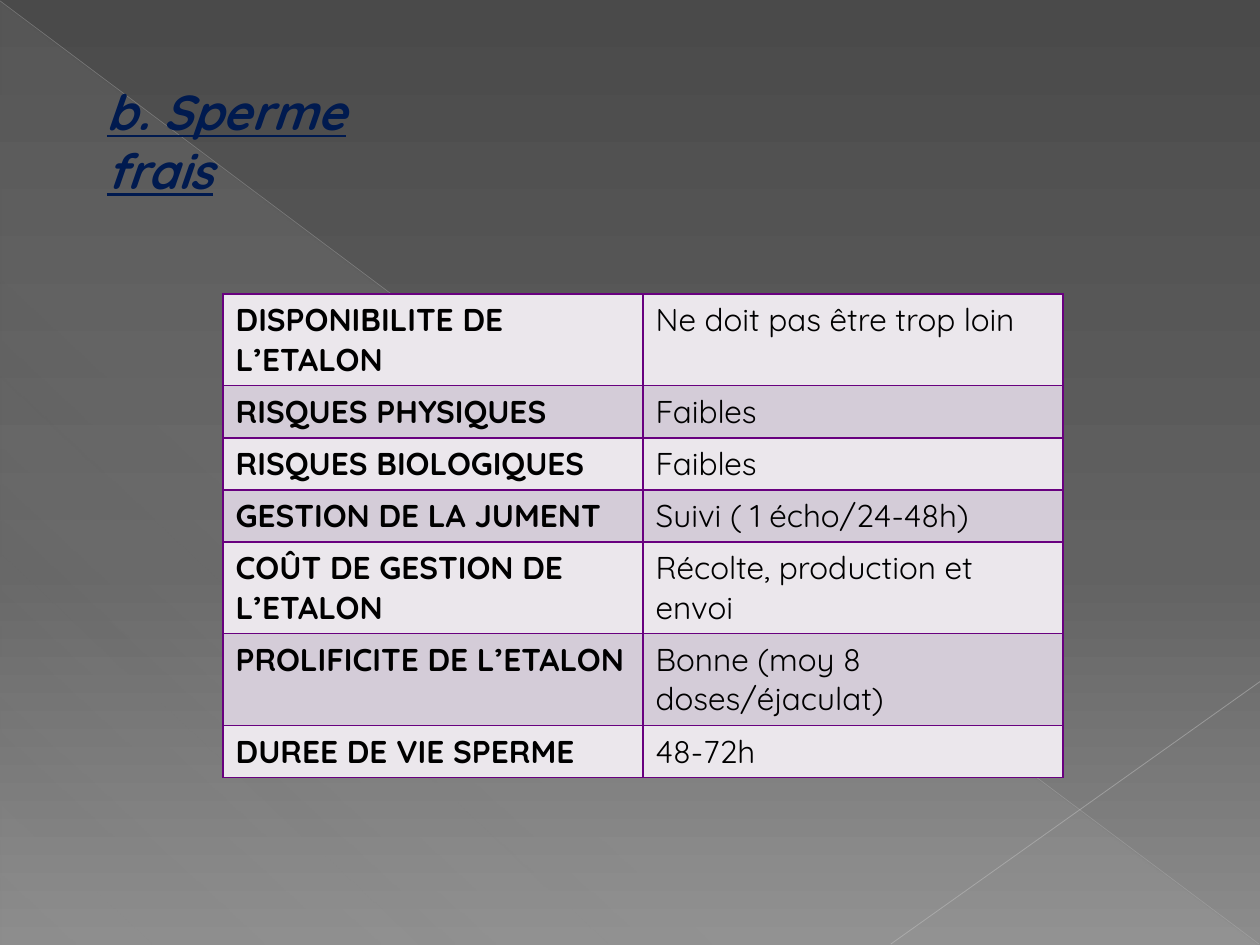
from lxml import etree
from pptx import Presentation
from pptx.dml.color import RGBColor
from pptx.enum.shapes import MSO_CONNECTOR, MSO_SHAPE
from pptx.oxml.ns import qn
from pptx.util import Pt

STRAIGHT = MSO_CONNECTOR.STRAIGHT
TRIANGLE = MSO_SHAPE.RIGHT_TRIANGLE
FONT = "Quicksand"
COLORS = {
    "bg_top": "4A4A4A", "bg_mid": "626262", "bg_low": "8C8C8C",
    "triangle": "D2D2D2", "long_line": "BFBFBF", "short_line": "C6C6C6",
    "title": "001A4F", "text": "000000", "border": "68007F",
    "light": "EBE7EC", "dark": "D4CCD8",
}
ROWS = [
    ("DISPONIBILITE DE L’ETALON", "Ne doit pas être trop loin"),
    ("RISQUES PHYSIQUES", "Faibles"),
    ("RISQUES BIOLOGIQUES", "Faibles"),
    ("GESTION DE LA JUMENT", "Suivi ( 1 écho/24-48h)"),
    ("COÛT DE GESTION DE L’ETALON", "Récolte, production et envoi"),
    ("PROLIFICITE DE L’ETALON", "Bonne (moy 8 doses/éjaculat)"),
    ("DUREE DE VIE SPERME", "48-72h"),
]


def rgb(name):
    """Return the named colour."""
    return RGBColor.from_string(COLORS[name])


def add_color(parent, name, alpha=100):
    """Append a colour with an opacity in percent."""
    clr = etree.SubElement(parent, qn("a:srgbClr"), val=COLORS[name])
    if alpha < 100:
        etree.SubElement(clr, qn("a:alpha"), val=str(alpha * 1000))


def set_gradient(fill, element, stops, angle):
    """Fill with (position, colour, opacity) stops at a clockwise angle."""
    fill.gradient()
    fill.gradient_angle = 360 - angle
    gs_lst = next(element.iter(qn("a:gsLst")))
    for old in list(gs_lst):
        gs_lst.remove(old)
    for pos, name, alpha in stops:
        gs = etree.SubElement(gs_lst, qn("a:gs"), pos=str(pos * 1000))
        add_color(gs, name, alpha)


def write(tf, text, size=18, color="text", bold=False, italic=False, underline=False):
    """Write one formatted run into a text frame."""
    r = tf.paragraphs[0].add_run()
    r.text = text
    r.font.name, r.font.size = FONT, Pt(size)
    r.font.color.rgb = rgb(color)
    r.font.bold, r.font.italic, r.font.underline = bold, italic, underline


def add_triangle(s):
    """Add the faint triangle behind the content."""
    sp = s.shapes.add_shape(TRIANGLE, Pt(0.5), Pt(1), Pt(719), Pt(539))
    sp.shadow.inherit = False
    stops = [(0, "triangle", 10), (70, "triangle", 8), (100, "triangle", 1)]
    set_gradient(sp.fill, sp._element, stops, 133)
    sp.line.fill.background()


def add_line(s, start, end, color, width, alpha):
    """Add a thin translucent line."""
    ln = s.shapes.add_connector(STRAIGHT, *map(Pt, start + end))
    ln.line.width = Pt(width)
    ln.line.fill.solid()
    solid = next(ln._element.spPr.iter(qn("a:solidFill")))
    add_color(solid, color, alpha)
    etree.SubElement(ln._element.spPr, qn("a:effectLst"))


def set_borders(cell, color, width):
    """Draw all four borders of a cell."""
    tc_pr = cell._tc.get_or_add_tcPr()
    for i, side in enumerate(("a:lnL", "a:lnR", "a:lnT", "a:lnB")):
        ln = etree.Element(qn(side), w=str(Pt(width)))
        add_color(etree.SubElement(ln, qn("a:solidFill")), color)
        tc_pr.insert(i, ln)


def add_table(s, rows, left, top, width, row_height):
    """Add the banded two-column table."""
    frame = s.shapes.add_table(len(rows), 2, Pt(left), Pt(top),
                               Pt(width), Pt(row_height * len(rows)))
    for i, row in enumerate(rows):
        for j, text in enumerate(row):
            cell = frame.table.cell(i, j)
            cell.fill.solid()
            cell.fill.fore_color.rgb = rgb("dark" if i % 2 else "light")
            set_borders(cell, "border", 1)
            write(cell.text_frame, text, bold=j == 0)


def add_title(s, text):
    """Add the slide heading."""
    tf = s.shapes.add_textbox(Pt(54), Pt(43.2), Pt(217.4), Pt(41)).text_frame
    tf.word_wrap = True
    write(tf, text, size=28, color="title", bold=True, italic=True, underline=True)


def main():
    """Build and save the slide."""
    prs = Presentation()
    prs.slide_width, prs.slide_height = Pt(720), Pt(540)
    s = prs.slides.add_slide(prs.slide_layouts[6])
    stops = [(0, "bg_top", 100), (60, "bg_mid", 100), (100, "bg_low", 100)]
    set_gradient(s.background.fill, s._element, stops, 90)
    add_triangle(s)
    add_line(s, (0, 0.5), (719.5, 539.5), "long_line", 0.39, 35)
    add_line(s, (720, 389.5), (509, 539.5), "short_line", 0.47, 45)
    add_table(s, ROWS, 127.5, 168, 480, 29.6)
    add_title(s, "b. Sperme frais")
    prs.save("out.pptx")


if __name__ == "__main__":
    main()
